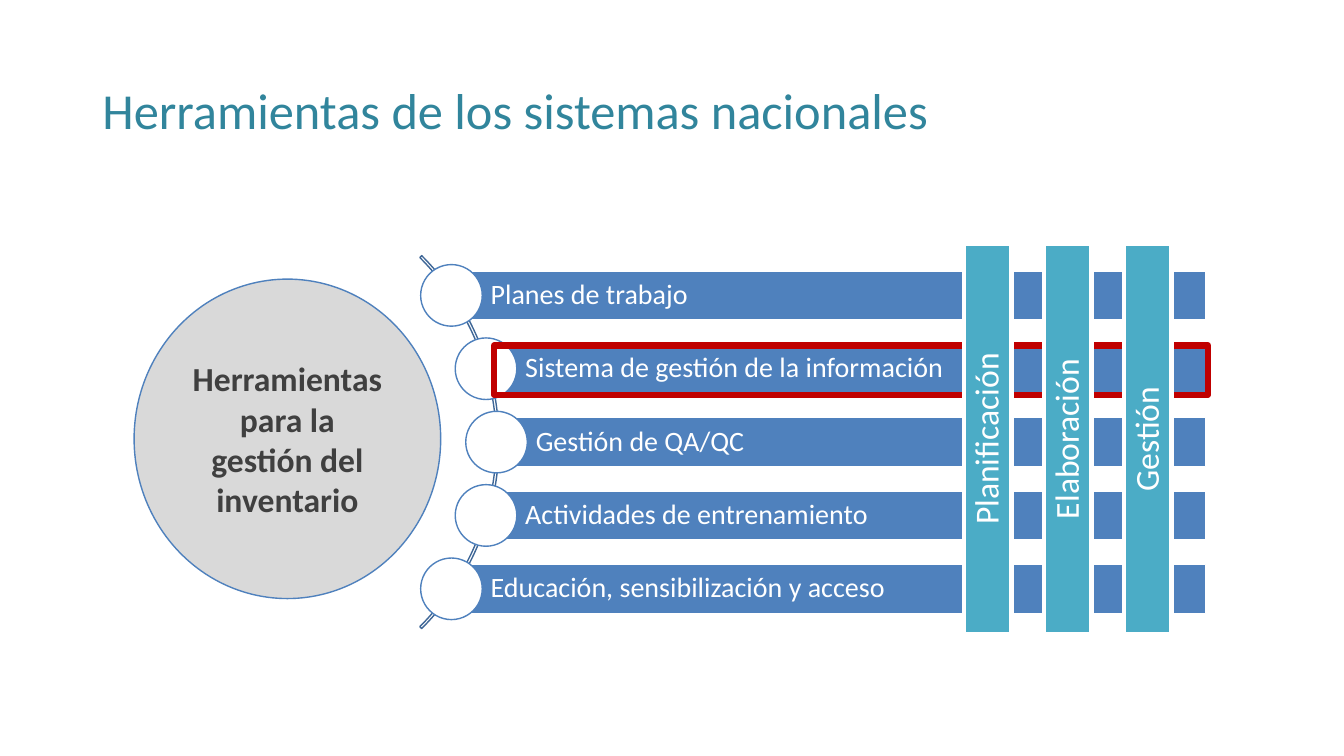
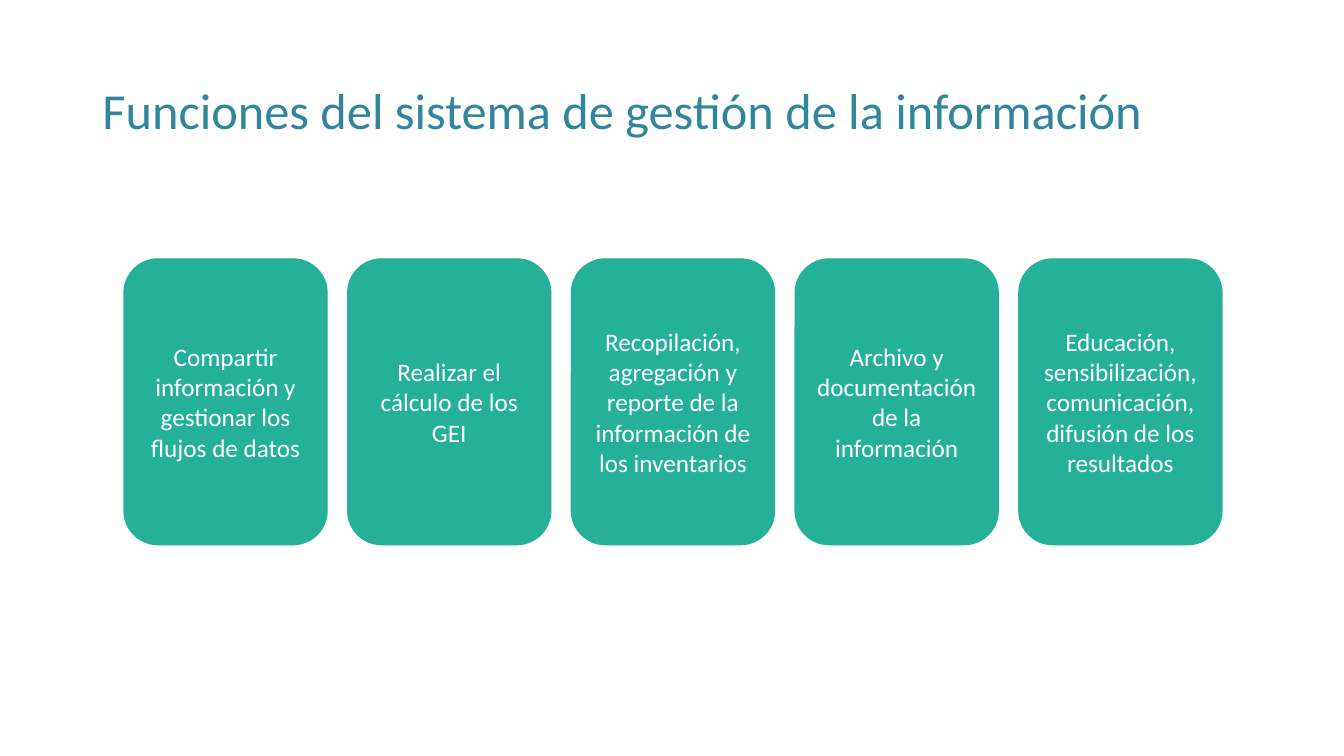
from math import sqrt
from pptx import Presentation
from pptx.dml.color import RGBColor
from pptx.enum.shapes import MSO_SHAPE
from pptx.enum.text import MSO_ANCHOR, MSO_AUTO_SIZE, PP_ALIGN
from pptx.util import Pt

# Content
TOOLS_TITLE = "Herramientas de los sistemas nacionales"
HUB = "Herramientas para la gestión del inventario"
TOOLS = [
    "Planes de trabajo",
    "Sistema de gestión de la información",
    "Gestión de QA/QC",
    "Actividades de entrenamiento",
    "Educación, sensibilización y acceso",
]
STAGES = ["Planificación", "Elaboración", "Gestión"]
FUNCTIONS_TITLE = "Funciones del sistema de gestión de la información"
FUNCTIONS = [
    "Compartir información y gestionar los flujos de datos",
    "Realizar el cálculo de los GEI",
    "Recopilación, agregación y reporte de la información de los inventarios",
    "Archivo y documentación de la información",
    "Educación, sensibilización, comunicación, difusión de los resultados",
]

# Shared style
FONT = "Calibri"
WHITE = RGBColor(0xFF, 0xFF, 0xFF)
TITLE_BLUE = RGBColor(0x31, 0x85, 0x9C)
BLUE = RGBColor(0x4F, 0x81, 0xBD)
DARK_BLUE = RGBColor(0x3F, 0x67, 0x97)
AQUA = RGBColor(0x4B, 0xAC, 0xC6)
GREEN = RGBColor(0x25, 0xB1, 0x99)
LIGHT_GREY = RGBColor(0xD9, 0xD9, 0xD9)
DARK_GREY = RGBColor(0x40, 0x40, 0x40)
RED = RGBColor(0xC0, 0x00, 0x00)


def set_text(shape, text, size, color, bold=False, align=PP_ALIGN.CENTER,
             spacing=1.0, insets=(7.2, 3.6, 7.2, 3.6)):
    tf = shape.text_frame
    left, top, right, bottom = map(Pt, insets)
    frame_format = {
        "word_wrap": True, "auto_size": MSO_AUTO_SIZE.NONE,
        "vertical_anchor": MSO_ANCHOR.MIDDLE, "margin_left": left,
        "margin_top": top, "margin_right": right, "margin_bottom": bottom,
    }
    for name, value in frame_format.items():
        setattr(tf, name, value)
    p = tf.paragraphs[0]
    p.alignment, p.line_spacing = align, spacing
    r = p.add_run()
    r.text = text
    for name, value in {"name": FONT, "size": Pt(size), "bold": bold}.items():
        setattr(r.font, name, value)
    r.font.color.rgb = color


def add_shape(s, kind, box, fill, line, width=1):
    sp = s.shapes.add_shape(kind, *map(Pt, box))
    sp.shadow.inherit = False
    if fill is None:
        sp.fill.background()
    else:
        sp.fill.solid()
        sp.fill.fore_color.rgb = fill
    sp.line.color.rgb = line
    sp.line.width = Pt(width)
    return sp


def add_slide(prs, title):
    s = prs.slides.add_slide(prs.slide_layouts[5])
    sp = s.shapes.title
    sp.left, sp.top, sp.width, sp.height = map(Pt, (66, 28.8, 828, 104.4))
    set_text(sp, title, 36, TITLE_BLUE, align=PP_ALIGN.LEFT, spacing=0.9)
    return s


def build_tools(prs):
    s = add_slide(prs, TOOLS_TITLE)
    cx, cy = 168.1, 315.8

    # Arc that carries the dots
    arc_d = 376.6
    arc = add_shape(s, MSO_SHAPE.BLOCK_ARC,
                    (cx - arc_d / 2, cy - arc_d / 2, arc_d, arc_d),
                    None, DARK_BLUE)
    for i, value in enumerate((189, 27, 0.005)):
        arc.adjustments[i] = value

    # Tool bars start at dots placed along the arc
    radius, step, bar_h, dot_d, right = 186.6, 52.4, 35, 44, 861.1
    for i, tool in enumerate(TOOLS):
        dy = (i - (len(TOOLS) - 1) / 2) * step
        x, y = cx + sqrt(radius ** 2 - dy ** 2), cy + dy
        bar = add_shape(s, MSO_SHAPE.RECTANGLE,
                        (x, y - bar_h / 2, right - x, bar_h), BLUE, WHITE)
        set_text(bar, tool, 20, WHITE, align=PP_ALIGN.LEFT, spacing=0.9,
                 insets=(28, 4, 4, 4))
        add_shape(s, MSO_SHAPE.OVAL,
                  (x - dot_d / 2, y - dot_d / 2, dot_d, dot_d), WHITE, BLUE)

    # Hub and highlight
    hub = add_shape(s, MSO_SHAPE.OVAL, (95.8, 199.4, 219, 228.2),
                    LIGHT_GREY, BLUE)
    set_text(hub, HUB, 24, DARK_GREY, bold=True)
    add_shape(s, MSO_SHAPE.RECTANGLE, (353, 246.7, 509.8, 35.3),
              None, RED, 4.5)

    # Upright stage bars
    length, thick, first_x, gap, mid_y = 279.4, 33.8, 705.6, 57.2, 313.6
    for i, stage in enumerate(STAGES):
        mid_x = first_x + i * gap
        bar = add_shape(s, MSO_SHAPE.RECTANGLE,
                        (mid_x - length / 2, mid_y - thick / 2, length, thick),
                        AQUA, WHITE, 3)
        bar.rotation = 270
        set_text(bar, stage, 24, WHITE, spacing=0.9, insets=(3, 3, 3, 3))


def build_functions(prs):
    s = add_slide(prs, FUNCTIONS_TITLE)
    left, top, width, height, step = 88.6, 185, 145, 204, 159.8
    for i, function in enumerate(FUNCTIONS):
        card = add_shape(s, MSO_SHAPE.ROUNDED_RECTANGLE,
                         (left + i * step, top, width, height), GREEN, GREEN)
        set_text(card, function, 18, WHITE)


def main():
    prs = Presentation()
    prs.slide_width, prs.slide_height = Pt(960), Pt(540)
    build_tools(prs)
    build_functions(prs)
    prs.save("out.pptx")


if __name__ == "__main__":
    main()
